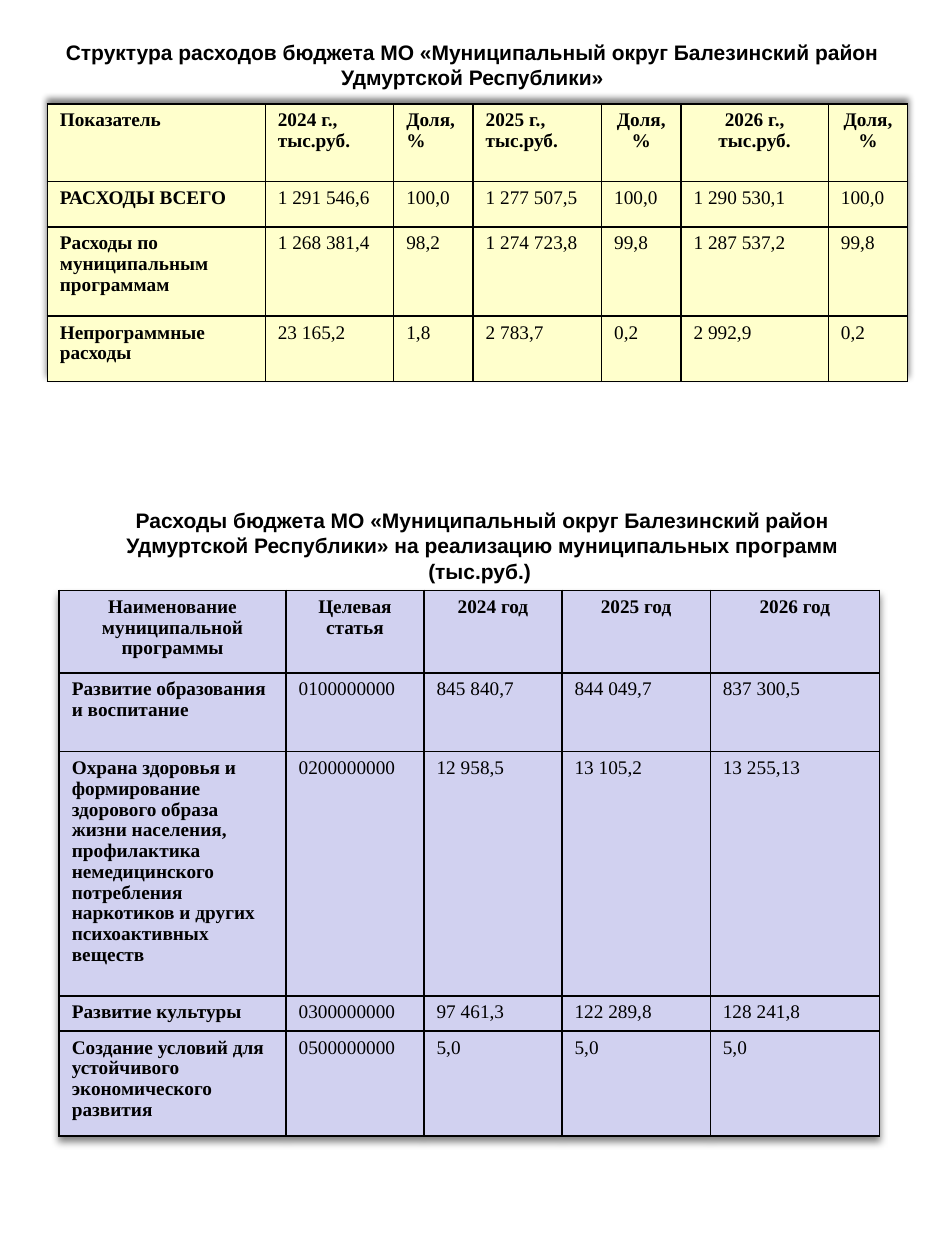
import pptx
import pptx.util
import pptx.dml.color
import pptx.enum.text
import lxml.etree

Rgb = pptx.dml.color.RGBColor
Align = pptx.enum.text.PP_ALIGN
Anchor = pptx.enum.text.MSO_ANCHOR
NS = "http://schemas.openxmlformats.org/drawingml/2006/main"

theme = {
    "ink": Rgb.from_string("000000"),
    "cream": Rgb.from_string("FFFFCC"),
    "lilac": Rgb.from_string("D1D1F0"),
    "head": {"name": "Arial", "size": pptx.util.Pt(12), "bold": True},
    "cell": {"name": "Times New Roman", "size": pptx.util.Pt(11)},
    "pitch": 0.97,
}

deck = pptx.Presentation()
deck.slide_width = pptx.util.Inches(7.5)
deck.slide_height = pptx.util.Inches(10)
slide = deck.slides.add_slide(deck.slide_layouts[5])


def span(*parts):
    """Turn percents of the slide (x, y, x, y...) into lengths."""
    sides = (deck.slide_width, deck.slide_height)
    return [int(sides[i % 2] * part / 100) for i, part in enumerate(parts)]


def write(frame, text, form, align):
    frame.word_wrap = True
    para = frame.paragraphs[0]
    para.alignment = align
    run = para.add_run()
    run.text = text
    for key, value in form.items():
        setattr(run.font, key, value)
    run.font.color.rgb = theme["ink"]
    return para


# Headings
title = slide.shapes.title
second = slide.shapes.add_textbox(*span(7.33, 39.8, 87.47, 7.1))
for key, value in zip(("left", "top", "width", "height"), span(5, 2.8, 90, 4.7)):
    setattr(title, key, value)
heads = [
    (title, Anchor.MIDDLE, "Структура расходов бюджета МО «Муниципальный округ "
     "Балезинский район Удмуртской Республики»"),
    (second, Anchor.TOP, "Расходы бюджета МО «Муниципальный округ Балезинский район "
     "Удмуртской Республики» на реализацию муниципальных программ (тыс.руб.) "),
]
for shape, anchor, text in heads:
    write(shape.text_frame, text, theme["head"], Align.CENTER)
    shape.text_frame.vertical_anchor = anchor

# Table data: columns and rows are percents of the slide,
# "mid" is the first centred header column, "sun" the shadow angle
tables = [
    {
        "at": (5, 8.25), "fill": "cream", "mid": 4, "sun": 270,
        "cols": [23.07, 13.6, 8.4, 13.6, 8.4, 15.6, 8.4],
        "rows": [6.15, 3.6, 7.1, 5.2],
        "text": [
            ["Показатель", "2024 г., тыс.руб.", "Доля,%", "2025 г., тыс.руб.",
             "Доля,%", "2026 г., тыс.руб.", "Доля,%"],
            ["РАСХОДЫ ВСЕГО", "1 291 546,6", "100,0", "1 277 507,5", "100,0",
             "1 290 530,1", "100,0"],
            ["Расходы по муниципальным программам", "1 268 381,4", "98,2",
             "1 274 723,8", "99,8", "1 287 537,2", "99,8"],
            ["Непрограммные расходы", "23 165,2", "1,8", "2 783,7", "0,2",
             "2 992,9", "0,2"],
        ],
    },
    {
        "at": (6.27, 46.85), "fill": "lilac", "mid": 0, "sun": 90,
        "cols": [24, 14.6, 14.6, 15.7, 17.9],
        "rows": [6.55, 6.25, 19.4, 2.8, 8.3],
        "text": [
            ["Наименование муниципальной программы", "Целевая статья",
             "2024 год", "2025 год", "2026 год"],
            ["Развитие образования и воспитание", "0100000000",
             "845 840,7", "844 049,7", "837 300,5"],
            ["Охрана здоровья и формирование здорового образа жизни населения, "
             "профилактика немедицинского потребления наркотиков и других "
             "психоактивных веществ ", "0200000000",
             "12 958,5", "13 105,2", "13 255,13"],
            ["Развитие культуры", "0300000000",
             "97 461,3", "122 289,8", "128 241,8"],
            ["Создание условий для устойчивого экономического развития",
             "0500000000", "5,0", "5,0", "5,0"],
        ],
    },
]

# Tables
for item in tables:
    cols, rows = item["cols"], item["rows"]
    area = span(*item["at"], sum(cols), sum(rows))
    table = slide.shapes.add_table(len(rows), len(cols), *area).table
    for col, part in zip(table.columns, cols):
        col.width = span(part)[0]
    for row, part in zip(table.rows, rows):
        row.height = span(0, part)[1]

    # Soft shadow
    table._tbl.tblPr.insert(0, lxml.etree.fromstring(
        f'<a:effectLst xmlns:a="{NS}"><a:outerShdw blurRad="50800" dist="38100" '
        f'dir="{item["sun"] * 60000}"><a:srgbClr val="000000">'
        '<a:alpha val="50000"/></a:srgbClr></a:outerShdw></a:effectLst>'))

    for r, line in enumerate(item["text"]):
        for c, text in enumerate(line):
            cell = table.cell(r, c)
            form = {**theme["cell"], "bold": r == 0 or c == 0}
            mid = r == 0 and c >= item["mid"]
            para = write(cell.text_frame, text, form,
                         Align.CENTER if mid else Align.LEFT)
            para.line_spacing = theme["pitch"]
            cell.fill.solid()
            cell.fill.fore_color.rgb = theme[item["fill"]]
            # Borders come before the fill
            for i, side in enumerate("LRTB"):
                cell._tc.tcPr.insert(i, lxml.etree.fromstring(
                    f'<a:ln{side} xmlns:a="{NS}" w="12700"><a:solidFill>'
                    f'<a:srgbClr val="{theme["ink"]}"/></a:solidFill></a:ln{side}>'))

deck.save("out.pptx")
